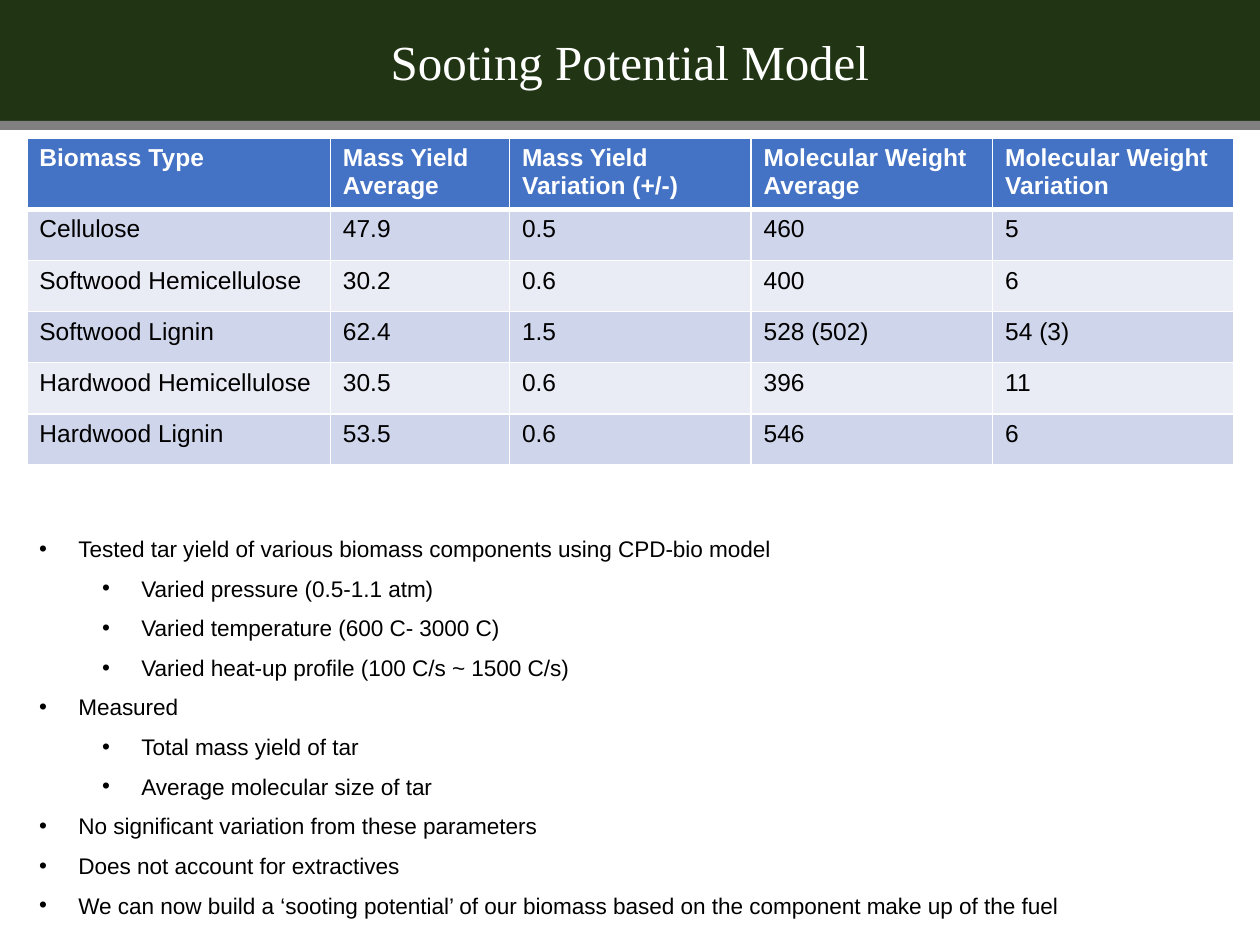
from lxml import etree
from pptx import Presentation
from pptx import util as u
from pptx.dml.color import RGBColor
from pptx.enum import shapes, text
from pptx.oxml.ns import qn


def color(hex_string):
    return RGBColor.from_string(hex_string)


def write(paragraph, words, size=14, font="Arial", ink="000000", bold=False,
          align=text.PP_ALIGN.LEFT):
    paragraph.alignment = align
    run = paragraph.add_run()
    run.text = words
    run.font.size = u.Pt(size)
    run.font.name = font
    run.font.bold = bold
    run.font.color.rgb = color(ink)


deck = Presentation()
deck.slide_width, deck.slide_height = u.Cm(25.4), u.Cm(19.05)
slide = deck.slides.add_slide(deck.slide_layouts[6])

# Title band with a grey rule below it
bands = []
for top, height, fill in [(0, 2.44, "213514"), (2.44, 0.18, "808080")]:
    band = slide.shapes.add_shape(shapes.MSO_SHAPE.RECTANGLE, u.Cm(0), u.Cm(top),
                                  u.Cm(25.4), u.Cm(height))
    band.shadow.inherit = False
    band.fill.solid()
    band.fill.fore_color.rgb = color(fill)
    band.line.fill.background()
    bands.append(band)
title = bands[0].text_frame
title.vertical_anchor = text.MSO_ANCHOR.MIDDLE
write(title.paragraphs[0], "Sooting Potential Model", size=28,
      font="Times New Roman", ink="FFFFFF", align=text.PP_ALIGN.CENTER)

# Findings
findings = [
    (0, "Tested tar yield of various biomass components using CPD-bio model"),
    (1, "Varied pressure (0.5-1.1 atm)"),
    (1, "Varied temperature (600 C- 3000 C)"),
    (1, "Varied heat-up profile (100 C/s ~ 1500 C/s)"),
    (0, "Measured"),
    (1, "Total mass yield of tar"),
    (1, "Average molecular size of tar"),
    (0, "No significant variation from these parameters"),
    (0, "Does not account for extractives"),
    (0, "We can now build a ‘sooting potential’ of our biomass based on "
        "the component make up of the fuel"),
]
findings_box = slide.shapes.add_textbox(u.Cm(0.54), u.Cm(10.44), u.Cm(24.33), u.Cm(8.15))
findings_frame = findings_box.text_frame
findings_frame.word_wrap = True
for number, (level, words) in enumerate(findings):
    finding = findings_frame.add_paragraph() if number else findings_frame.paragraphs[0]
    write(finding, words, size=12.9)
    finding.level = level
    finding.line_spacing = 1.4
    finding.space_after = u.Pt(1)
    layout = finding._p.get_or_add_pPr()
    layout.set("marL", str(u.Cm(0.79 + 1.27 * level)))
    layout.set("indent", str(u.Cm(-0.79)))
    etree.SubElement(layout, qn("a:buFont"), typeface="Arial")
    etree.SubElement(layout, qn("a:buChar"), char="•")

# Yield table
yields = [
    ("Biomass Type", "Mass Yield Average", "Mass Yield Variation (+/-)",
     "Molecular Weight Average", "Molecular Weight Variation"),
    ("Cellulose", "47.9", "0.5", "460", "5"),
    ("Softwood Hemicellulose", "30.2", "0.6", "400", "6"),
    ("Softwood Lignin", "62.4", "1.5", "528 (502)", "54 (3)"),
    ("Hardwood Hemicellulose", "30.5", "0.6", "396", "11"),
    ("Hardwood Lignin", "53.5", "0.6", "546", "6"),
]
column_widths = [6.12, 3.61, 4.87, 4.87, 4.87]
row_height = 1.03
yield_table = slide.shapes.add_table(
    len(yields), len(column_widths), u.Cm(0.54), u.Cm(2.78),
    u.Cm(sum(column_widths)), u.Cm(row_height * len(yields))).table
for column, width in zip(yield_table.columns, column_widths):
    column.width = u.Cm(width)

for r, record in enumerate(yields):
    yield_table.rows[r].height = u.Cm(row_height)
    header = r == 0
    fill = "4472C4" if header else ("E9EBF5", "CFD5EA")[r % 2]
    for c, words in enumerate(record):
        cell = yield_table.cell(r, c)
        write(cell.text_frame.paragraphs[0], words, bold=header,
              ink="FFFFFF" if header else "000000")
        # White borders, thicker around the header's lower edge
        edges = {"lnL": 1, "lnR": 1, "lnT": 3 if r == 1 else 1, "lnB": 3 if header else 1}
        cell_format = cell._tc.get_or_add_tcPr()
        for edge, points in edges.items():
            border = etree.SubElement(cell_format, qn("a:" + edge), w=str(u.Pt(points)))
            paint = etree.SubElement(border, qn("a:solidFill"))
            etree.SubElement(paint, qn("a:srgbClr"), val="FFFFFF")
        cell.fill.solid()
        cell.fill.fore_color.rgb = color(fill)

deck.save("out.pptx")
